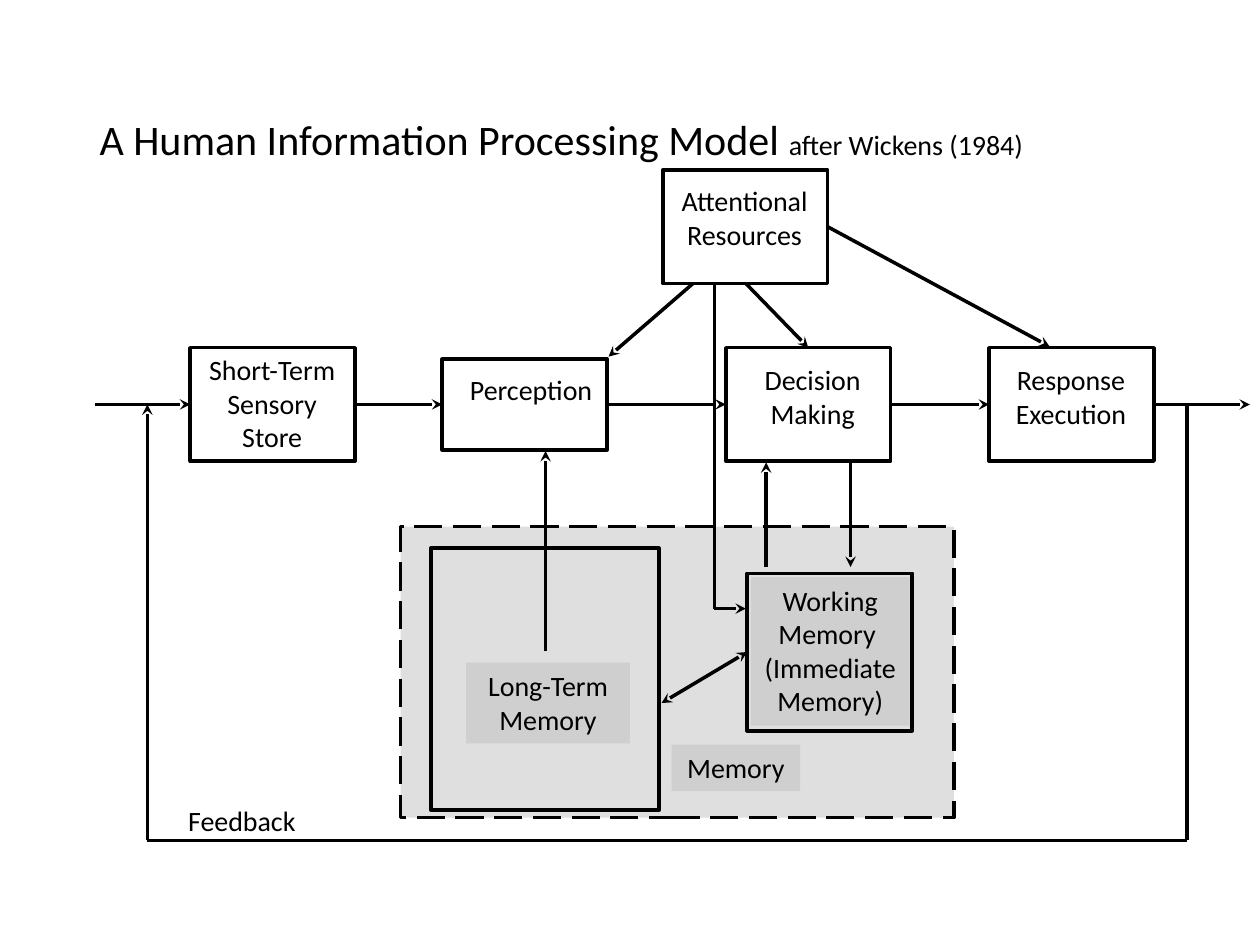
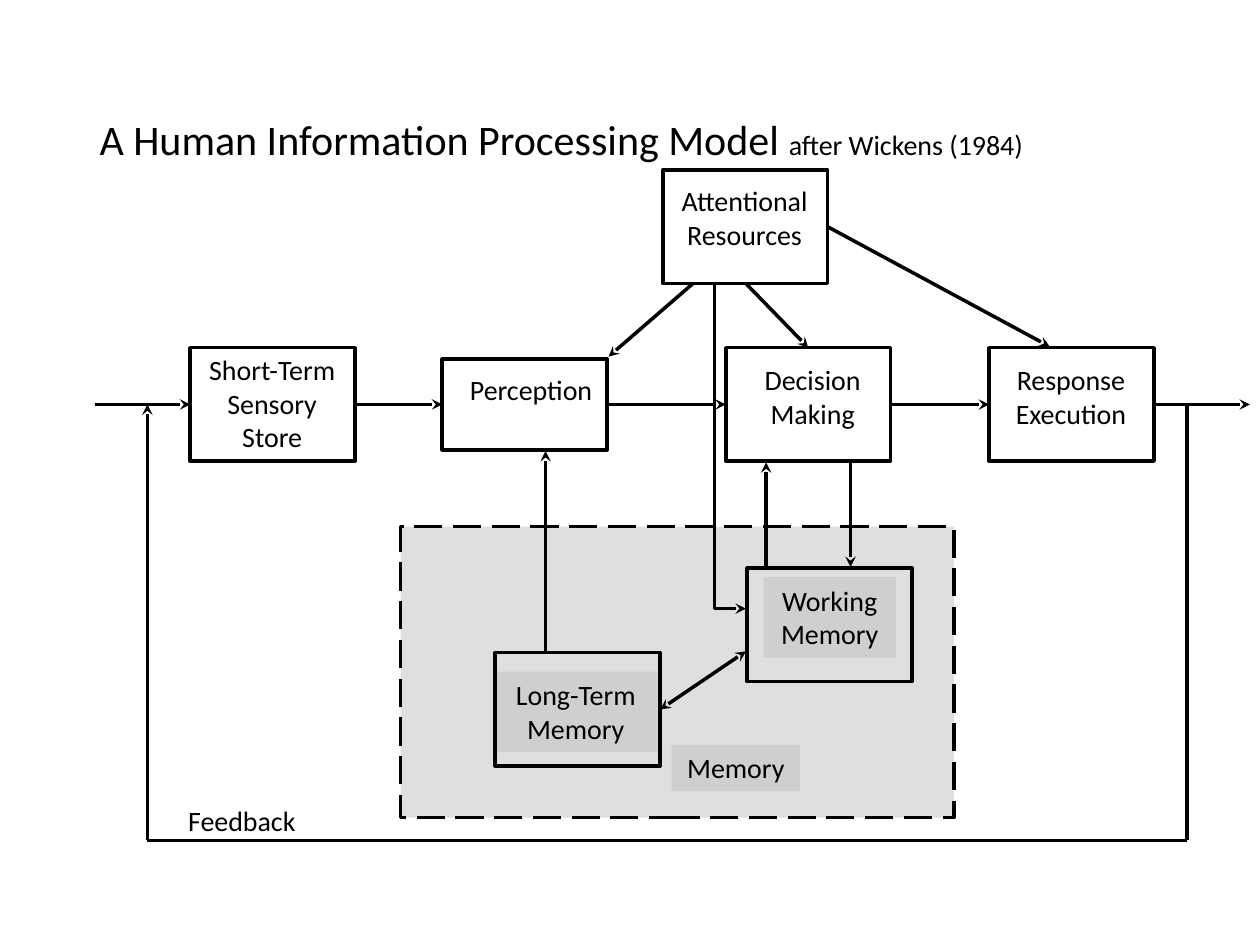
from lxml import etree
from pptx import Presentation
from pptx import util as u
from pptx.dml.color import RGBColor
from pptx.enum import dml, shapes, text
from pptx.oxml import ns

BLACK = RGBColor(0x00, 0x00, 0x00)
SILVER = RGBColor(0xC0, 0xC0, 0xC0)
FONT = "Calibri"
BODY_SIZE = u.Pt(16)
TITLE_SIZE = u.Pt(24)
LINE_WIDTH = u.Pt(2)
BOX_WIDTH, BOX_HEIGHT = 1.31, 0.9
TOP, LEFT, BOTTOM, RIGHT = range(4)

STAGES = [
    ("Short-Term\nSensory\nStore", 0, 0, BOX_HEIGHT, (-0.04, -0.01, 1.38)),
    ("Perception", 2, 0.09, 0.72, (0.06, 0.06, 1.29)),
    ("Decision\nMaking", 4.25, 0, BOX_HEIGHT, (0.14, 0.07, 1.1)),
    ("Response\nExecution", 6.34, 0, BOX_HEIGHT, (0.05, 0.07, 1.2)),
]
DETAILED_MEMORY = {
    "long_term": (0.24, 0.17, 1.81, 2.08),
    "long_term_label": ("Long-Term\nMemory", 0.52, 1.08, 1.3),
    "working": (2.75, 0.37, BOX_WIDTH, 1.25),
    "working_label": ("Working\nMemory \v(Immediate\vMemory)", 2.78, 0.4, 1.26),
    "exchange_sites": (None, LEFT),
}
SIMPLE_MEMORY = {
    "long_term": (0.75, 1, BOX_WIDTH, BOX_HEIGHT),
    "long_term_label": ("Long-Term\nMemory", 0.74, 1.15, 1.3),
    "working": (2.75, 0.33, BOX_WIDTH, BOX_HEIGHT),
    "working_label": ("Working\nMemory", 2.88, 0.4, 1.05),
    "exchange_sites": (RIGHT, None),
}


def fill_silver(shape):
    """Fill a shape with half-transparent silver."""
    shape.fill.solid()
    shape.fill.fore_color.rgb = SILVER
    color = shape.fill._xPr.find(ns.qn("a:solidFill"))[0]
    etree.SubElement(color, ns.qn("a:alpha"), val="50000")


def add_frame(slide, left, top, width, height):
    """Add an outlined, unfilled rectangle."""
    frame = slide.shapes.add_shape(
        shapes.MSO_SHAPE.RECTANGLE, *map(u.Inches, (left, top, width, height)))
    frame.shadow.inherit = False
    frame.fill.background()
    frame.line.color.rgb = BLACK
    frame.line.width = LINE_WIDTH
    return frame


def add_label(slide, wording, left, top, width, shaded=False):
    """Add a centred label whose height follows its number of lines."""
    height = 0.1 + 0.27 * len(wording.splitlines())
    label = slide.shapes.add_textbox(*map(u.Inches, (left, top, width, height)))
    frame = label.text_frame
    frame.text = wording
    frame.word_wrap = False
    frame.auto_size = text.MSO_AUTO_SIZE.SHAPE_TO_FIT_TEXT
    for paragraph in frame.paragraphs:
        paragraph.alignment = text.PP_ALIGN.CENTER
        paragraph.font.name = FONT
        paragraph.font.size = BODY_SIZE
        paragraph.font.color.rgb = BLACK
    if shaded:
        fill_silver(label)


def add_link(slide, start, end, ends=("tailEnd",), begin=None, finish=None):
    """Draw a line between points, joined to any (shape, site) given."""
    link = slide.shapes.add_connector(
        shapes.MSO_CONNECTOR.STRAIGHT, *map(u.Inches, (*start, *end)))
    link.line.color.rgb = BLACK
    link.line.width = LINE_WIDTH
    properties = link._element.spPr
    outline = properties.find(ns.qn("a:ln"))
    for arrow in ends:
        etree.SubElement(outline, ns.qn(f"a:{arrow}"), type="stealth")
    etree.SubElement(properties, ns.qn("a:effectLst"))
    if begin:
        link.begin_connect(*begin)
    if finish:
        link.end_connect(*finish)


def add_title(slide, left, top, width, height):
    """Place the title with its smaller attribution."""
    title = slide.shapes.title
    title.left, title.top, title.width, title.height = map(
        u.Inches, (left, top, width, height))
    frame = title.text_frame
    frame.auto_size = text.MSO_AUTO_SIZE.NONE
    frame.vertical_anchor = text.MSO_ANCHOR.MIDDLE
    heading = frame.paragraphs[0]
    heading.alignment = text.PP_ALIGN.LEFT
    heading.line_spacing = 0.9
    heading.font.name = FONT
    heading.font.color.rgb = BLACK
    for wording, size in (("A Human Information Processing Model ", TITLE_SIZE),
                          ("after Wickens (1984)", BODY_SIZE)):
        run = heading.add_run()
        run.text = wording
        run.font.size = size


def add_stages(slide, left, top):
    """Draw the row of stages with the flow through it and return the stages."""
    stages = []
    for wording, x, y, height, (dx, dy, width) in STAGES:
        stages.append(add_frame(slide, left + x, top + y, BOX_WIDTH, height))
        add_label(slide, wording, left + x + dx, top + y + dy, width)
    flow = top + BOX_HEIGHT / 2
    outlet = left + STAGES[-1][1] + BOX_WIDTH
    add_link(slide, (left - 0.76, flow), (left, flow), finish=(stages[0], LEFT))
    for source, target in zip(stages, stages[1:]):
        add_link(slide, (left, flow), (outlet, flow),
                 begin=(source, RIGHT), finish=(target, LEFT))
    add_link(slide, (outlet, flow), (outlet + 0.76, flow), begin=(stages[-1], RIGHT))
    return stages


def add_feedback(slide, left, top, width, height):
    """Draw the feedback loop around the given box, ending at its top left."""
    right, bottom = left + width, top + height
    add_link(slide, (right, top), (right, bottom), ends=())
    add_link(slide, (right, bottom), (left, bottom), ends=())
    add_link(slide, (left, bottom), (left, top))
    add_label(slide, "Feedback", left + 0.17, bottom - 0.34, 1.16)


def add_memory(slide, left, top, parts):
    """Draw the dashed memory region with its two stores."""
    region = add_frame(slide, left, top, 4.39, 2.31)
    fill_silver(region)
    region.line.dash_style = dml.MSO_LINE.LONG_DASH
    stores = []
    for store in ("long_term", "working"):
        wording, label_x, label_y, label_width = parts[f"{store}_label"]
        add_label(slide, wording, left + label_x, top + label_y, label_width, shaded=True)
        x, y, width, height = parts[store]
        stores.append(add_frame(slide, left + x, top + y, width, height))
    add_label(slide, "Memory", left + 2.15, top + 1.73, 1.02, shaded=True)
    begin, finish = [(store, site) if site is not None else None
                     for store, site in zip(stores, parts["exchange_sites"])]
    add_link(slide, (left + 2.07, top + 1.4), (left + 2.74, top + 0.99),
             ends=("headEnd", "tailEnd"), begin=begin, finish=finish)
    add_link(slide, (left + 1.15, top + 0.99), (left + 1.15, top - 0.6))
    add_link(slide, (left + 2.9, top + 0.32), (left + 2.9, top - 0.51))
    add_link(slide, (left + 3.57, top - 0.51), (left + 3.57, top + 0.32))


def add_attention(slide, left, top, decision):
    """Draw the attentional resources and the arrows that leave them."""
    attention = add_frame(slide, left, top, BOX_WIDTH, BOX_HEIGHT)
    add_label(slide, "Attentional\nResources", left - 0.03, top + 0.06, 1.36)
    base = top + BOX_HEIGHT
    add_link(slide, (left + 0.24, base), (left - 0.43, top + 1.48))
    add_link(slide, (left + 0.66, base), (left + 1.16, top + 1.4), finish=(decision, TOP))
    add_link(slide, (left + BOX_WIDTH, top + 0.48), (left + 3.07, top + 1.4),
             begin=(attention, RIGHT))
    corner = (left + 0.41, top + 3.48)
    add_link(slide, (left + 0.41, base), corner, ends=())
    add_link(slide, corner, (left + 0.66, top + 3.48))


def add_model_slide(deck, memory_parts):
    """Add one slide with the whole processing model."""
    slide = deck.slides.add_slide(deck.slide_layouts[5])
    add_memory(slide, 3.18, 4.18, memory_parts)
    add_title(slide, 0.69, 0.4, 8.62, 1.45)
    stages = add_stages(slide, 1.51, 2.76)
    add_feedback(slide, 1.17, 3.21, 8.25, 3.46)
    add_attention(slide, 5.26, 1.35, stages[2])


def main():
    """Build and save the deck."""
    deck = Presentation()
    deck.slide_width, deck.slide_height = u.Inches(10), u.Inches(7.5)
    for memory_parts in (DETAILED_MEMORY, SIMPLE_MEMORY):
        add_model_slide(deck, memory_parts)
    deck.save("out.pptx")


if __name__ == "__main__":
    main()
